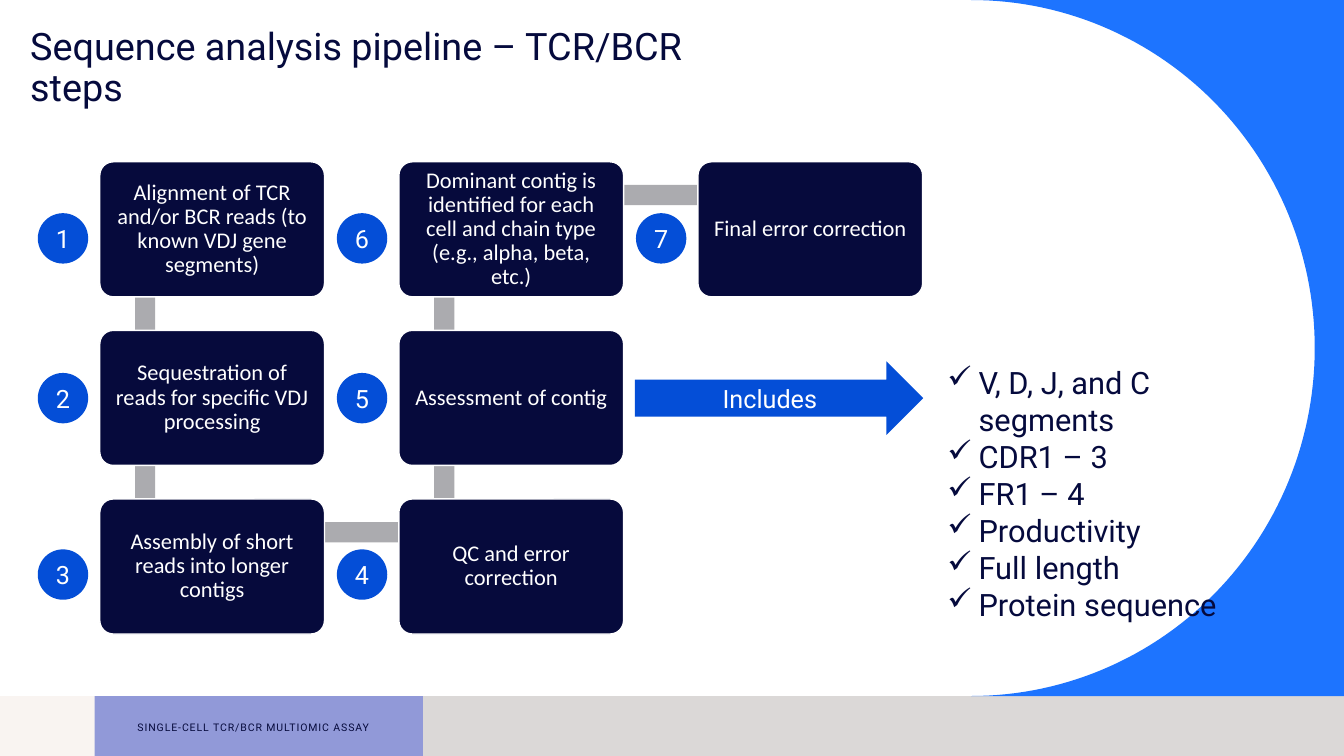
import math
from lxml import etree
from pptx import Presentation
from pptx.dml.color import RGBColor
from pptx.enum.shapes import MSO_SHAPE
from pptx.enum.text import MSO_ANCHOR, PP_ALIGN
from pptx.oxml.ns import qn
from pptx.util import Inches, Pt

RECTANGLE, ROUNDED = MSO_SHAPE.RECTANGLE, MSO_SHAPE.ROUNDED_RECTANGLE
OVAL, ARROW = MSO_SHAPE.OVAL, MSO_SHAPE.RIGHT_ARROW
TOP, MIDDLE = MSO_ANCHOR.TOP, MSO_ANCHOR.MIDDLE
LEFT, CENTER, RIGHT = PP_ALIGN.LEFT, PP_ALIGN.CENTER, PP_ALIGN.RIGHT

TITLE = "Sequence analysis pipeline – TCR/BCR steps"
FOOTER = "SINGLE-CELL TCR/BCR MULTIOMIC ASSAY"
ARROW_LABEL = "Includes"
# Steps in order: column, row, text
STEPS = [
    (0, 0, "Alignment of TCR and/or BCR reads (to known VDJ gene segments)"),
    (0, 1, "Sequestration of reads for specific VDJ processing"),
    (0, 2, "Assembly of short reads into longer contigs"),
    (1, 2, "QC and error correction"),
    (1, 1, "Assessment of contig"),
    (1, 0, "Dominant contig is identified for each cell and chain type "
           "(e.g., alpha, beta, etc.)"),
    (2, 0, "Final error correction"),
]
INCLUDED = ["V, D, J, and C segments", "CDR1 – 3", "FR1 – 4",
            "Productivity", "Full length", "Protein sequence"]

THEME = {
    "navy": "060A3C", "ink": "050A3D", "blue": "044ED7", "bright": "1D74FF",
    "gray": "ABABAF", "band": "DBD8D7", "lilac": "9199D8", "cream": "F9F4F1",
    "white": "FFFFFF",
}
STYLES = {
    "title": {"size": Pt(54), "name": "Roboto", "color": "ink"},
    "step": {"size": Pt(32), "name": "Calibri", "color": "white"},
    "label": {"size": Pt(36), "name": "Roboto", "color": "white"},
    "list": {"size": Pt(44), "name": "Roboto", "color": "ink"},
    "footer": {"size": Pt(15), "name": "Roboto", "color": "navy"},
}

SLIDE_WIDTH, SLIDE_HEIGHT = 26.67, 15
BAND_TOP = 13.81
GRID_LEFT, GRID_TOP = 1.98, 3.21
COLUMN_PITCH, ROW_PITCH = 5.935, 3.345
BOX_WIDTH, BOX_HEIGHT = 4.46, 2.68
BAR_THICKNESS = 0.4
BADGE_SIZE = 1
BADGE_OFFSET = 1.23
BADGE_TOPS = [4.23, 7.4, 10.9]


def color(name):
    return RGBColor.from_string(THEME[name])


def add_block(slide, kind, left, top, width, height, fill, outline=None):
    shape = slide.shapes.add_shape(
        kind, Inches(left), Inches(top), Inches(width), Inches(height))
    shape.shadow.inherit = False
    shape.fill.solid()
    shape.fill.fore_color.rgb = color(fill)
    if outline:
        shape.line.color.rgb = color(outline)
        shape.line.width = Pt(2)
    else:
        shape.line.fill.background()
    return shape


def add_text_box(slide, left, top, width, height):
    return slide.shapes.add_textbox(
        Inches(left), Inches(top), Inches(width), Inches(height))


def add_bullet(paragraph, mark, indent):
    properties = paragraph._p.get_or_add_pPr()
    properties.set("marL", str(Inches(indent)))
    properties.set("indent", str(Inches(-indent)))
    etree.SubElement(properties, qn("a:buChar")).set("char", mark)


def write(shape, lines, style, align=LEFT, anchor=TOP, spacing=None,
          insets=(0.1, 0.05, 0.1, 0.05), bullet=None):
    """Fill a shape with one paragraph per line; insets run left, top, right, bottom."""
    frame = shape.text_frame
    margins = dict(zip(("margin_left", "margin_top", "margin_right", "margin_bottom"),
                       map(Inches, insets)))
    for name, value in {"word_wrap": True, "vertical_anchor": anchor, **margins}.items():
        setattr(frame, name, value)
    for index, line in enumerate(lines):
        paragraph = frame.add_paragraph() if index else frame.paragraphs[0]
        paragraph.alignment = align
        if spacing:
            paragraph.line_spacing = spacing
        if bullet:
            add_bullet(paragraph, bullet, 0.62)
        run = paragraph.add_run()
        run.text = line
        for name, value in STYLES[style].items():
            if name == "color":
                run.font.color.rgb = color(value)
            else:
                setattr(run.font, name, value)


def box_corner(column, row):
    return GRID_LEFT + column * COLUMN_PITCH, GRID_TOP + row * ROW_PITCH


def add_backdrop(slide):
    """Bottom band and the blue area outside a half ellipse."""
    band_height = SLIDE_HEIGHT - BAND_TOP
    for width, fill in [(SLIDE_WIDTH, "band"), (8.39, "lilac"), (1.88, "cream")]:
        add_block(slide, RECTANGLE, 0, BAND_TOP, width, band_height, fill)
    center_x, radius_x, radius_y = 19.27, 6.82, BAND_TOP / 2
    count = 120
    angles = [math.pi * step / count for step in range(count + 1)]
    curve = [(Inches(center_x + radius_x * math.sin(angle)),
              Inches(radius_y * (1 - math.cos(angle)))) for angle in angles]
    corners = [(Inches(SLIDE_WIDTH), Inches(BAND_TOP)), (Inches(SLIDE_WIDTH), 0)]
    builder = slide.shapes.build_freeform(*curve[0])
    builder.add_line_segments(curve[1:] + corners, close=True)
    shape = builder.convert_to_shape()
    shape.shadow.inherit = False
    shape.fill.solid()
    shape.fill.fore_color.rgb = color("bright")
    shape.line.fill.background()


def add_bar(slide, start, end):
    """Gray bar joining two neighbouring boxes, drawn beneath them."""
    left, top = box_corner(*start)
    if start[1] == end[1]:
        add_block(slide, RECTANGLE, left + 0.9, top + 0.46,
                  COLUMN_PITCH, BAR_THICKNESS, "gray")
        return
    top = box_corner(start[0], min(start[1], end[1]))[1]
    bar = add_block(slide, RECTANGLE, left + 0.9 - ROW_PITCH / 2, top + 2.13,
                    ROW_PITCH, BAR_THICKNESS, "gray")
    bar.rotation = 90 if end[1] > start[1] else 270


def add_pipeline(slide):
    places = [(column, row) for column, row, _ in STEPS]
    for start, end in zip(places, places[1:]):
        add_bar(slide, start, end)
    for number, (column, row, text) in enumerate(STEPS, 1):
        left, top = box_corner(column, row)
        box = add_block(slide, ROUNDED, left, top, BOX_WIDTH, BOX_HEIGHT, "navy", "white")
        box.adjustments[0] = 0.1
        write(box, [text], "step", CENTER, MIDDLE, 0.9, insets=(0.17,) * 4)
        badge = add_block(slide, OVAL, left - BADGE_OFFSET, BADGE_TOPS[row],
                          BADGE_SIZE, BADGE_SIZE, "blue")
        write(badge, [str(number)], "label", CENTER, MIDDLE, insets=(0.06,) * 4)


def main():
    presentation = Presentation()
    presentation.slide_width = Inches(SLIDE_WIDTH)
    presentation.slide_height = Inches(SLIDE_HEIGHT)
    slide = presentation.slides.add_slide(presentation.slide_layouts[6])

    add_backdrop(slide)
    footer = add_text_box(slide, 2.66, 14.22, 4.77, 0.39)
    write(footer, [FOOTER], "footer", RIGHT, MIDDLE, 1.2, (0.06, 0.06, 0.1, 0.06))
    footer.text_frame.paragraphs[0].runs[0].font._element.set("spc", "130")
    write(add_text_box(slide, 0.5, 0.5, 14.89, 2.97), [TITLE], "title", spacing=0.9)

    add_pipeline(slide)
    arrow = add_block(slide, ARROW, 12.6, 7.17, 5.72, 1.46, "blue")
    write(arrow, [ARROW_LABEL], "label", CENTER, MIDDLE, insets=(0.06,) * 4)
    write(add_text_box(slide, 18.7, 7.17, 6.84, 4.54), INCLUDED, "list", bullet="✓")

    presentation.save("out.pptx")


if __name__ == "__main__":
    main()
